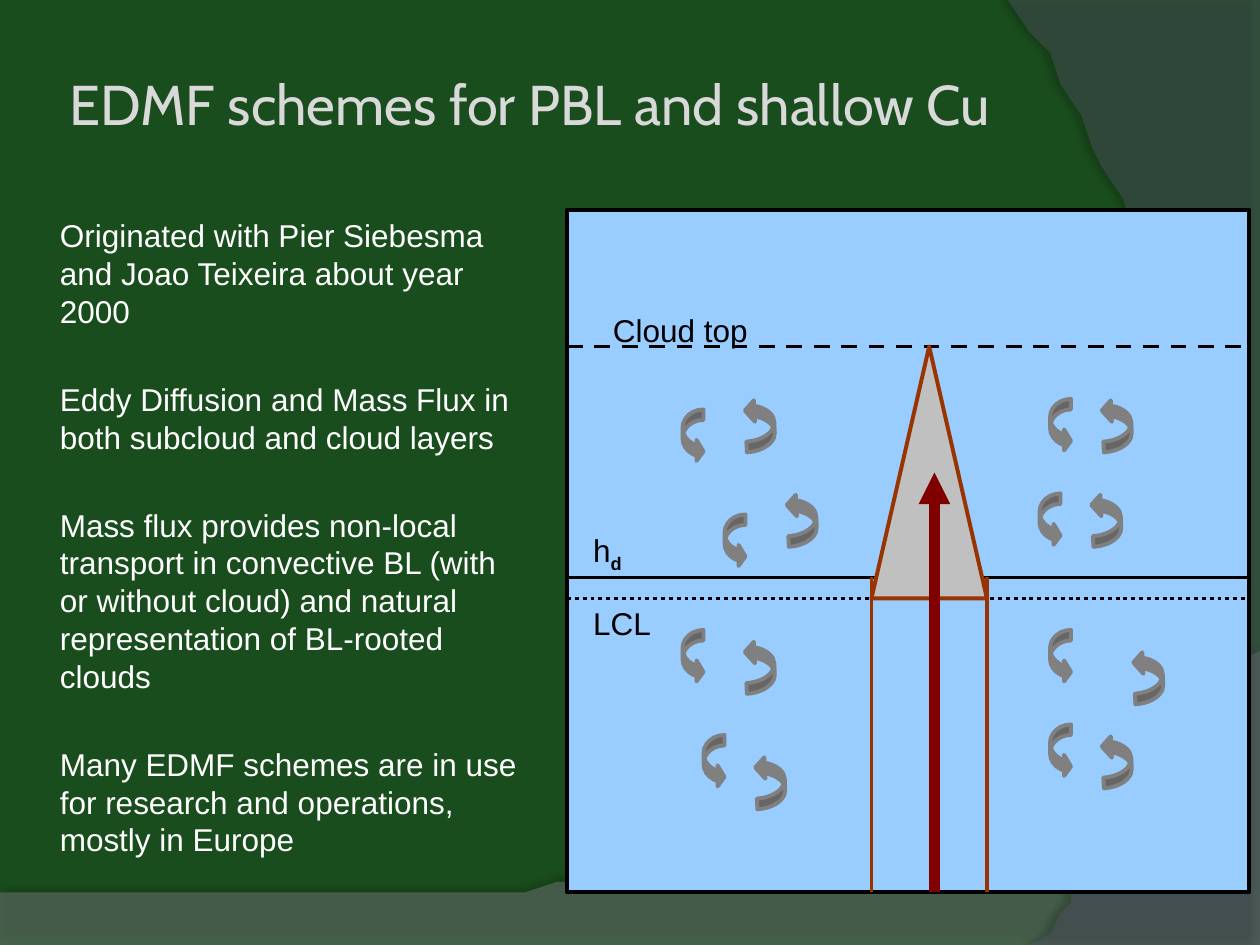
import pptx
import pptx.dml.color
import pptx.enum.dml
import pptx.enum.shapes
import pptx.enum.text
import pptx.oxml
import pptx.oxml.ns
import pptx.util

COLUMNS, ROWS = 120, 90  # grid of square cells, twelve to the inch
CELL = pptx.util.Inches(10) / COLUMNS
SHAPES = pptx.enum.shapes.MSO_SHAPE
DASHES = pptx.enum.dml.MSO_LINE
ANCHORS = pptx.enum.text.MSO_ANCHOR

BODY = [
    "Originated with Pier Siebesma and Joao Teixeira about year 2000",
    "Eddy Diffusion and Mass Flux in both subcloud and cloud layers",
    "Mass flux provides non-local transport in convective BL (with or without cloud) "
    "and natural representation of BL-rooted clouds",
    "Many EDMF schemes are in use for research and operations, mostly in Europe",
]
# Left and top cell of each eddy arrow
DOWN_EDDIES = [(100, 38), (69, 49), (99, 47), (65, 60),
               (100, 60), (67, 70), (100, 69), (65, 39)]
UP_EDDIES = [(71, 38), (105, 38), (75, 47), (104, 47),
             (108, 62), (72, 72), (71, 61), (105, 70)]


def cells(*counts):
    return [round(count * CELL) for count in counts]


def color(code):
    return pptx.dml.color.RGBColor.from_string(code)


def add_xml(parent, markup):
    namespaces = pptx.oxml.ns.nsdecls("a")
    element = pptx.oxml.parse_xml(markup.replace("/>", f" {namespaces}/>", 1)
                                  if markup.count("<") == 1
                                  else markup.replace(">", f" {namespaces}>", 1))
    parent.append(element)


def paint(shape, fill, line=None):
    shape.shadow.inherit = False
    shape.fill.solid()
    shape.fill.fore_color.rgb = color(fill)
    if line:
        shape.line.color.rgb = color(line)
        shape.line.width = pptx.util.Pt(2.25)
    else:
        shape.line.fill.background()


def add_figure(page, kind, place, fill, line, turn=0, adjustments=()):
    shape = page.shapes.add_shape(kind, *cells(*place))
    paint(shape, fill, line)
    shape.rotation = turn
    for index, value in enumerate(adjustments):
        shape.adjustments[index] = value


def add_line(page, start, end, code, width=2.25, dash=None, arrow=False):
    line = page.shapes.add_connector(
        pptx.enum.shapes.MSO_CONNECTOR.STRAIGHT, *cells(*start, *end))
    line.line.color.rgb = color(code)
    line.line.width = pptx.util.Pt(width)
    if dash:
        line.line.dash_style = dash
    if arrow:
        add_xml(line.line._get_or_add_ln(), '<a:tailEnd type="triangle"/>')
    add_xml(line._element.spPr, "<a:effectLst/>")


def curve_points(controls, steps=40):
    """Points along a cubic curve with four control points."""
    points = []
    for step in range(steps + 1):
        t = step / steps
        weights = ((1 - t) ** 3, 3 * t * (1 - t) ** 2, 3 * t ** 2 * (1 - t), t ** 3)
        points.append(tuple(sum(weight * control[axis]
                                for weight, control in zip(weights, controls))
                            for axis in (0, 1)))
    return points


def add_swoosh(page, corners, controls, fill, opacity, shade, distance, direction):
    points = corners + curve_points(controls)
    builder = page.shapes.build_freeform(*points[0], scale=CELL)
    builder.add_line_segments(points[1:], close=True)
    shape = builder.convert_to_shape()
    paint(shape, fill)
    tint = shape.fill._xPr.find(".//" + pptx.oxml.ns.qn("a:srgbClr"))
    add_xml(tint, f'<a:alpha val="{opacity * 1000}"/>')
    effects = shape._element.spPr.find(pptx.oxml.ns.qn("a:effectLst"))
    add_xml(effects,
            f'<a:outerShdw blurRad="{pptx.util.Pt(4)}" dist="{pptx.util.Pt(distance)}" '
            f'dir="{direction * 60000}" rotWithShape="0"><a:srgbClr val="000000">'
            f'<a:alpha val="{shade * 1000}"/></a:srgbClr></a:outerShdw>')


def add_text(page, place, texts, size, font, code, anchor=ANCHORS.TOP, inset=1.2):
    box = page.shapes.add_textbox(*cells(*place))
    frame = box.text_frame
    frame.word_wrap = True
    frame.vertical_anchor = anchor
    frame.margin_left, = cells(inset)
    for index, text in enumerate(texts):
        para = frame.add_paragraph() if index else frame.paragraphs[0]
        para.text = text
        para.font.size = pptx.util.Pt(size)
        para.font.name = font
        para.font.color.rgb = color(code)
    return frame.paragraphs


def add_label(page, left, top, width, text):
    return add_text(page, (left, top, width, 5.2), [text], 18, "Arial", "000000")[0]


def add_background(page):
    page.background.fill.solid()
    page.background.fill.fore_color.rgb = color("1A4D1D")
    add_swoosh(page, [(0, ROWS), (COLUMNS, ROWS)],
               [(COLUMNS, 62.4), (67.1, 87.5), (46.9, 86.3), (0, 84.6)],
               "7D7D84", 45, 35, 3.5, 270)
    add_swoosh(page, [(COLUMNS, 0.2), (COLUMNS, ROWS)],
               [(98.5, ROWS), (112.2, 74.3), (122.2, 36), (96, 0)],
               "57566C", 40, 45, 4, 180)


def add_diagram(page):
    left, right, top, bottom = 54, 119, 20, 85
    cloud_top, mixed_top, condensation = 33, 55, 57
    plume_left, plume_right, updraft = 83, 94, 89

    # Air column and its levels
    add_figure(page, SHAPES.RECTANGLE, (left, top, right - left, bottom - top),
               "99CCFF", "000000")
    for level, dash in ((condensation, DASHES.ROUND_DOT), (mixed_top, None),
                        (cloud_top, DASHES.DASH)):
        add_line(page, (left, level), (right, level), "000000", dash=dash)

    # Plume, cloud and updraft
    for side in (plume_left, plume_right):
        add_line(page, (side, mixed_top), (side, bottom), "993300")
    add_figure(page, SHAPES.ISOSCELES_TRIANGLE,
               (plume_left, cloud_top, plume_right - plume_left,
                condensation - cloud_top), "C0C0C0", "993300")
    add_line(page, (updraft, bottom), (updraft, 45), "800000", width=6, arrow=True)

    # Eddies
    for places, width, turn, adjustments in (
            (DOWN_EDDIES, 2, 0, (0.5, 1, 0.33)),
            (UP_EDDIES, 2.75, 177, (0.37, 0.74, 0.33))):
        for place in places:
            add_figure(page, SHAPES.CURVED_RIGHT_ARROW, (*place, width, 5),
                       "808080", "808080", turn, adjustments)

    # Level names
    add_label(page, 55.3, 56.9, 9.7, "LCL")
    add_label(page, 57.2, 29, 15.7, "Cloud top")
    height = add_label(page, 55.3, 50, 9.7, "h")
    span = height.add_run()
    span.text = "d"
    span.font.bold = True
    span.font._element.set("baseline", "-25000")


def main():
    deck = pptx.Presentation()
    deck.slide_width, deck.slide_height = cells(COLUMNS, ROWS)
    page = deck.slides.add_slide(deck.slide_layouts[6])
    add_background(page)

    # Title and body
    add_text(page, (6, 3.6, 104.9, 12.4), ["EDMF schemes for PBL and shallow Cu"],
             32, "Cabin", "D9D9D9", ANCHORS.MIDDLE, inset=0.6)
    body = add_text(page, (4, 20, 47, 66), BODY, 18, "Arial", "FFFFFF", inset=1.7)
    for index, para in enumerate(body):
        para.line_spacing = pptx.util.Pt(21.6)
        para.space_before = pptx.util.Pt(28.7 if index else 0)

    add_diagram(page)
    deck.save("out.pptx")


if __name__ == "__main__":
    main()
